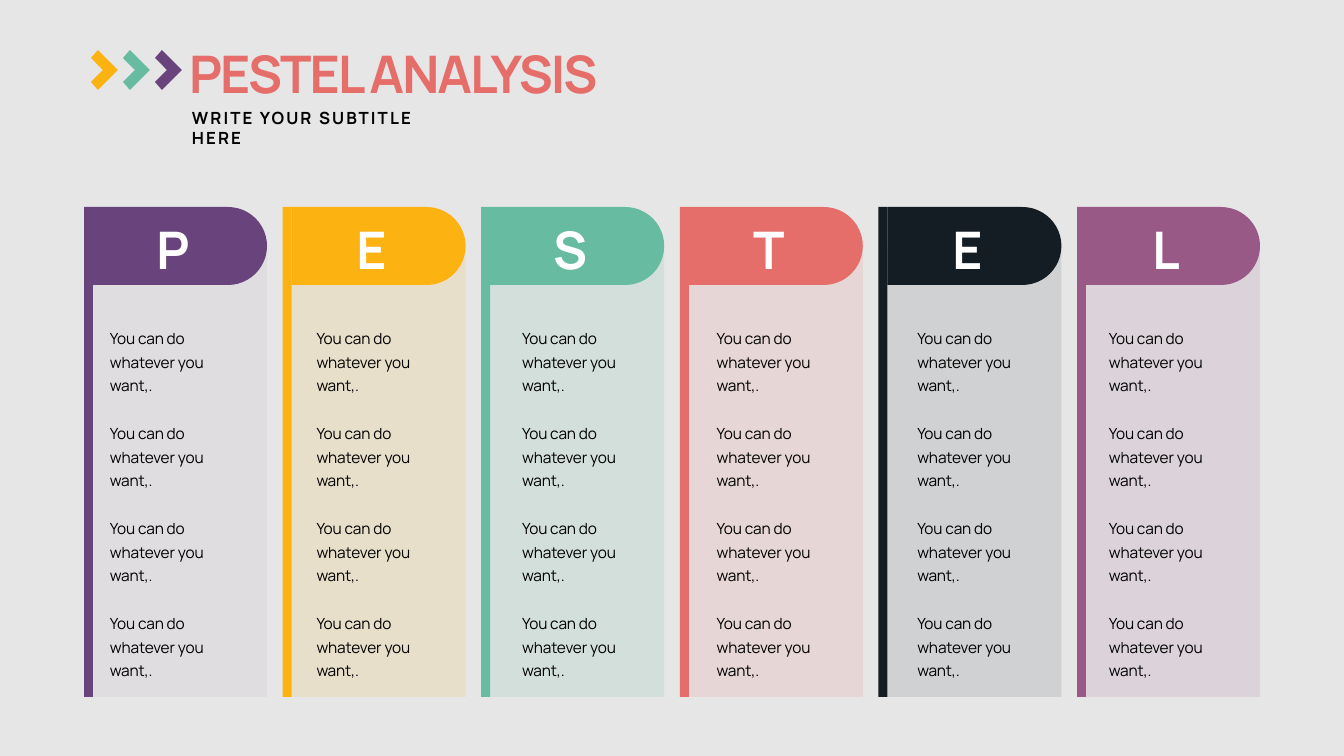
from lxml.etree import SubElement
from pptx import Presentation
from pptx.dml.color import RGBColor
from pptx.enum.shapes import MSO_SHAPE as Shape
from pptx.enum.text import MSO_ANCHOR as Anchor, MSO_AUTO_SIZE as Auto, PP_ALIGN as Align
from pptx.oxml.ns import qn
from pptx.util import Pt

PX = 914400 / 100.8
INK = "000000"
RED = "E66E6A"
BODY = "You can do whatever you want,."
HEAD = {"size": Pt(37), "bold": True}
SUB = {"size": Pt(12), "bold": True}
NOTE = {"size": Pt(11), "bold": False}
COLUMNS = [
    ("P", "69437B", 5, 16),
    ("E", "FCB210", 13, 24),
    ("S", "67BBA1", 15, 31),
    ("T", RED, 13, 27),
    ("E", "141C24", 10, 29),
    ("L", "985986", 13, 22),
]
CHEVRON = [(27, 20), (7, 0), (0, 8), (12, 20), (0, 32)]


def emu(*vals):
    """Turn px lengths into EMU."""
    return [round(val * PX) for val in vals]


def rgb(code):
    """Turn a hex string into a colour."""
    return RGBColor.from_string(code)


def paint(shape, code, alpha=100):
    """Give a shape a flat fill, with no line or shadow."""
    shape.shadow.inherit = False
    shape.line.fill.background()
    shape.fill.solid()
    shape.fill.fore_color.rgb = rgb(code)
    if alpha < 100:
        clr = shape._element.spPr.find(".//" + qn("a:srgbClr"))
        SubElement(clr, qn("a:alpha"), val=str(alpha * 1000))


def block(shapes, kind, box, code, alpha=100):
    """Add a preset shape at a px box."""
    shape = shapes.add_shape(kind, *emu(*box))
    paint(shape, code, alpha)
    return shape


def write(shape, box, text, style, code, track, anchor=Anchor.TOP, align=Align.LEFT):
    """Place a text shape at a px box and format its one paragraph."""
    for name, val in zip(("left", "top", "width", "height"), emu(*box)):
        setattr(shape, name, val)
    frame = shape.text_frame
    look = {"word_wrap": True, "auto_size": Auto.SHAPE_TO_FIT_TEXT, "vertical_anchor": anchor}
    for name, val in look.items():
        setattr(frame, name, val)
    para = frame.paragraphs[0]
    para.alignment = align
    run = para.add_run()
    run.text = text
    for name, val in {"name": "Manrope", **style}.items():
        setattr(run.font, name, val)
    run.font.color.rgb = rgb(code)
    run._r.get_or_add_rPr().set("spc", str(track))
    return para


def label(slide, box, *args):
    """Add a text box at a px box."""
    return write(slide.shapes.add_textbox(*emu(*box)), box, *args)


def header(slide, left, top):
    """Draw the title, the subtitle and the row of chevrons."""
    box = (left + 88, top - 14, 1165, 73)
    write(slide.shapes.title, box, "PESTEL ANALYSIS", HEAD, RED, -140, Anchor.BOTTOM)
    label(slide, (left + 91, top + 53, 283, 30), "WRITE YOUR SUBTITLE HERE", SUB, INK, 150)
    group = slide.shapes.add_group_shape()
    for i, code in enumerate(("FCB210", "67BBA1", "69437B")):
        path = group.shapes.build_freeform(7, 40, scale=PX)
        path.add_line_segments(CHEVRON, close=True)
        paint(path.convert_to_shape(*emu(left + 32 * i, top)), code)


def column(slide, left, top, wide, high, letter, code, alpha, inset):
    """Draw one lettered column with its four notes."""
    bar, cap = 9, 78
    body = wide - bar
    shapes = slide.shapes.add_group_shape().shapes
    shift = (body - cap) / 2
    turned = (left + bar + shift, top - shift, cap, body)
    pill = block(shapes, Shape.ROUND_2_SAME_RECTANGLE, turned, code)
    pill.rotation = 90
    pill.adjustments[0] = 0.5
    block(shapes, Shape.RECTANGLE, (left, top, bar, high), code)
    panel = (left + bar, top + cap / 2, body, high - cap / 2)
    block(shapes, Shape.RECTANGLE, panel, code, alpha)
    box = (left + 27, top + 5, 124, 73)
    label(slide, box, letter, HEAD, "FFFFFF", -140, Anchor.MIDDLE, Align.CENTER)
    for row in range(4):
        box = (left + inset, top + 113 + 95 * row, 159, 81)
        label(slide, box, BODY, NOTE, INK, -10).line_spacing = Pt(16.5)


def main():
    """Build and save the slide."""
    deck = Presentation()
    deck.slide_width, deck.slide_height = emu(1344, 756)
    slide = deck.slides.add_slide(deck.slide_layouts[5])
    fill = slide.background.fill
    fill.solid()
    fill.fore_color.rgb = rgb("E6E6E6")
    header(slide, 91, 50)
    left, span, wide = 84, 1176, 183
    step = (span - wide) / (len(COLUMNS) - 1)
    for i, parts in enumerate(COLUMNS):
        column(slide, left + step * i, 207, wide, 490, *parts)
    deck.save("out.pptx")


if __name__ == "__main__":
    main()
